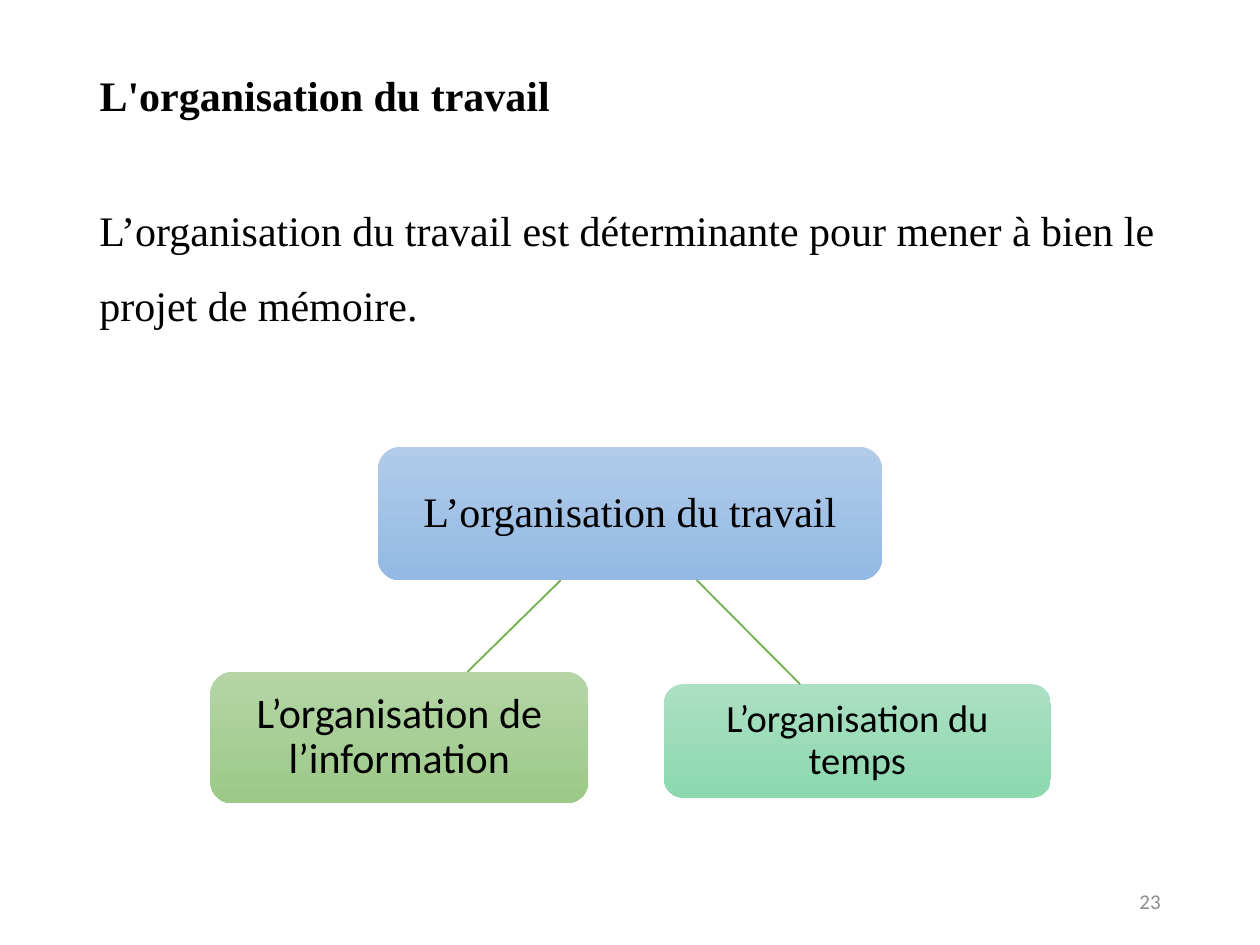
from dataclasses import dataclass

from lxml.etree import SubElement
from pptx import Presentation
from pptx.dml.color import RGBColor
from pptx.enum.shapes import MSO_CONNECTOR, MSO_SHAPE
from pptx.enum.text import MSO_ANCHOR, PP_ALIGN
from pptx.oxml.ns import qn
from pptx.slide import Slide
from pptx.text.text import TextFrame
from pptx.util import Inches, Pt

WIDE, HIGH = 10, 7.5
SERIF, SANS = "Times New Roman", "Calibri"


@dataclass
class Area:
    left: float
    top: float
    width: float
    height: float

    def box(self) -> tuple:
        return (Inches(self.left * WIDE), Inches(self.top * HIGH),
                Inches(self.width * WIDE), Inches(self.height * HIGH))


@dataclass
class Node:
    text: str
    area: Area
    light: str
    dark: str
    font: str = SANS
    size: int = 24


@dataclass
class Link:
    start: float
    end: float
    upper: Node
    lower: Node


def color(code: str) -> RGBColor:
    return RGBColor.from_string(code)


def write(frame: TextFrame, text: str, font: str, size: int, align: PP_ALIGN,
          space: float = 1.0, ink: str = "000000", bold: bool = False) -> None:
    frame.text = text
    frame.word_wrap = True
    for para in frame.paragraphs:
        para.alignment = align
        para.line_spacing = space
        for run in para.runs:
            run.font.name = font
            run.font.size = Pt(size)
            run.font.bold = bold
            run.font.color.rgb = color(ink)


def add_node(slide: Slide, node: Node) -> None:
    shape = slide.shapes.add_shape(MSO_SHAPE.ROUNDED_RECTANGLE, *node.area.box())
    shape.shadow.inherit = False
    shape.line.fill.background()
    shape.fill.gradient()
    shape.fill.gradient_angle = 270
    for stop, code in zip(shape.fill.gradient_stops, (node.light, node.dark)):
        stop.color.rgb = color(code)
    frame = shape.text_frame
    frame.vertical_anchor = MSO_ANCHOR.MIDDLE
    frame.margin_left = frame.margin_right = Inches(0.12)
    write(frame, node.text, node.font, node.size, PP_ALIGN.CENTER, 0.9)


def add_link(slide: Slide, link: Link) -> None:
    above, below = link.upper.area, link.lower.area
    line = slide.shapes.add_connector(
        MSO_CONNECTOR.STRAIGHT,
        Inches(link.start * WIDE), Inches((above.top + above.height) * HIGH),
        Inches(link.end * WIDE), Inches(below.top * HIGH))
    line.line.color.rgb = color("70AD47")
    line.line.width = Pt(1)
    SubElement(line._element.spPr, qn("a:effectLst"))


def add_title(slide: Slide, text: str, area: Area) -> None:
    title = slide.shapes.title
    title.left, title.top, title.width, title.height = area.box()
    frame = title.text_frame
    frame.vertical_anchor = MSO_ANCHOR.TOP
    frame.margin_top = Inches(0.2)
    write(frame, text, SERIF, 24, PP_ALIGN.LEFT, 0.9, bold=True)


def add_text(slide: Slide, area: Area) -> TextFrame:
    return slide.shapes.add_textbox(*area.box()).text_frame


def main() -> None:
    deck = Presentation()
    deck.slide_width, deck.slide_height = Inches(WIDE), Inches(HIGH)
    slide = deck.slides.add_slide(deck.slide_layouts[5])

    add_title(slide, "L'organisation du travail", Area(0.069, 0.053, 0.862, 0.193))
    body = add_text(slide, Area(0.069, 0.183, 0.862, 0.635))
    write(body, "L’organisation du travail est déterminante pour mener à bien le "
          "projet de mémoire.", SERIF, 24, PP_ALIGN.LEFT, 1.5)
    body.paragraphs[0].space_before = Pt(10)
    page = add_text(slide, Area(0.706, 0.927, 0.225, 0.053))
    page.vertical_anchor = MSO_ANCHOR.MIDDLE
    write(page, "23", SANS, 12, PP_ALIGN.RIGHT, ink="8C8C8C")

    work = Node("L’organisation du travail", Area(0.3, 0.473, 0.4, 0.141),
                "B1CBE9", "93B9E4", SERIF)
    time = Node("L’organisation du temps", Area(0.527, 0.724, 0.307, 0.12),
                "ABE0C3", "8CD8AF", size=22)
    info = Node("L’organisation de l’information", Area(0.167, 0.711, 0.3, 0.139),
                "B5D5A7", "9CC987")
    for node in (work, time, info):
        add_node(slide, node)
    for link in (Link(0.553, 0.635, work, time), Link(0.445, 0.371, work, info)):
        add_link(slide, link)

    deck.save("out.pptx")


if __name__ == "__main__":
    main()
